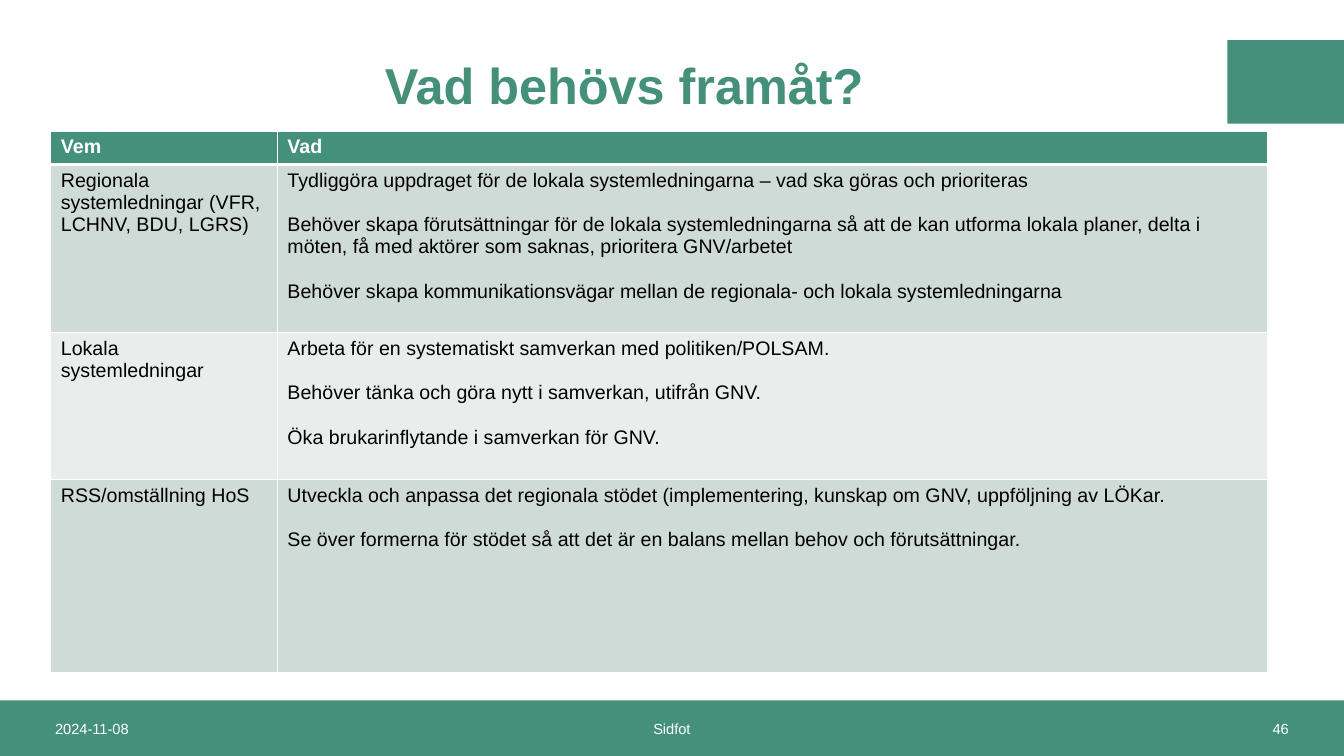
"""Build the slide "Vad behövs framåt?" with a table of needs per actor."""
from dataclasses import dataclass

from lxml import etree
from pptx import Presentation
from pptx.dml.color import RGBColor
from pptx.enum.shapes import MSO_SHAPE
from pptx.enum.text import MSO_ANCHOR, PP_ALIGN
from pptx.oxml.ns import qn
from pptx.slide import Slide
from pptx.table import _Cell
from pptx.text.text import TextFrame
from pptx.util import Cm, Pt

RECT = MSO_SHAPE.RECTANGLE
MIDDLE = MSO_ANCHOR.MIDDLE
LEFT, CENTER, RIGHT = PP_ALIGN.LEFT, PP_ALIGN.CENTER, PP_ALIGN.RIGHT


@dataclass(frozen=True)
class Theme:
    font: str = "Arial"
    green: str = "45907A"
    band_dark: str = "CFDBD7"
    band_light: str = "E9EEEC"
    white: str = "FFFFFF"
    black: str = "000000"
    title_size: float = 36
    body_size: float = 14
    footer_size: float = 10.5
    paragraph_gap: float = 16
    border: float = 1
    header_border: float = 3


@dataclass(frozen=True)
class Box:
    left: float
    top: float
    width: float
    height: float

    def lengths(self) -> tuple[Cm, Cm, Cm, Cm]:
        return Cm(self.left), Cm(self.top), Cm(self.width), Cm(self.height)


@dataclass(frozen=True)
class Label:
    box: Box
    text: str
    size: float
    color: str
    align: PP_ALIGN
    bold: bool = False
    line_spacing: float = 1.0


@dataclass(frozen=True)
class Row:
    height: float
    who: str
    what: tuple[str, ...]


THEME = Theme()
SLIDE_W, SLIDE_H = 33.87, 19.05
FOOTER_TOP, FOOTER_H = 17.65, 1.4

BLOCKS = (
    Box(30.93, 1.01, 2.94, 2.11),
    Box(0, FOOTER_TOP, SLIDE_W, FOOTER_H),
)
LABELS = (
    Label(Box(1.14, FOOTER_TOP, 8.81, FOOTER_H), "2024-11-08",
          THEME.footer_size, THEME.white, LEFT),
    Label(Box(11.22, FOOTER_TOP, 11.43, FOOTER_H), "Sidfot",
          THEME.footer_size, THEME.white, CENTER),
    Label(Box(23.92, FOOTER_TOP, 8.81, FOOTER_H), "46",
          THEME.footer_size, THEME.white, RIGHT),
    Label(Box(9.45, 0.56, 13.21, 3.35), "Vad behövs framåt?",
          THEME.title_size, THEME.green, LEFT, bold=True, line_spacing=0.9),
)
TABLE_LEFT, TABLE_TOP = 1.28, 3.3
COLUMN_WIDTHS = (5.71, 24.96)
ROWS = (
    Row(0.81, "Vem", ("Vad",)),
    Row(4.23, "Regionala systemledningar (VFR, LCHNV, BDU, LGRS)", (
        "Tydliggöra uppdraget för de lokala systemledningarna – vad ska göras och prioriteras",
        "Behöver skapa förutsättningar för de lokala systemledningarna så att de kan utforma "
        "lokala planer, delta i möten, få med aktörer som saknas, prioritera GNV/arbetet",
        "Behöver skapa kommunikationsvägar mellan de regionala- och lokala systemledningarna",
    )),
    Row(3.7, "Lokala systemledningar", (
        "Arbeta för en systematiskt samverkan med politiken/POLSAM.",
        "Behöver tänka och göra nytt i samverkan, utifrån GNV.",
        "Öka brukarinflytande i samverkan för GNV.",
    )),
    Row(4.88, "RSS/omställning HoS", (
        "Utveckla och anpassa det regionala stödet (implementering, kunskap om GNV, "
        "uppföljning av LÖKar.",
        "Se över formerna för stödet så att det är en balans mellan behov och förutsättningar.",
    )),
)


def write(tf: TextFrame, texts: tuple[str, ...], size: float, color: str,
          bold: bool = False, align: PP_ALIGN = LEFT, line_spacing: float = 1.0) -> None:
    """Write the texts as paragraphs that share one style."""
    for i, text in enumerate(texts):
        p = tf.add_paragraph() if i else tf.paragraphs[0]
        p.text = text
        p.alignment = align
        p.line_spacing = line_spacing
        p.space_before = Pt(THEME.paragraph_gap if i else 0)
        p.font.name = THEME.font
        p.font.size = Pt(size)
        p.font.bold = bold
        p.font.color.rgb = RGBColor.from_string(color)


def add_block(s: Slide, box: Box) -> None:
    """Add a plain green rectangle."""
    sp = s.shapes.add_shape(RECT, *box.lengths())
    sp.shadow.inherit = False
    sp.fill.solid()
    sp.fill.fore_color.rgb = RGBColor.from_string(THEME.green)
    sp.line.fill.background()


def add_label(s: Slide, label: Label) -> None:
    """Add a vertically centred text box."""
    tf = s.shapes.add_textbox(*label.box.lengths()).text_frame
    tf.word_wrap = True
    tf.vertical_anchor = MIDDLE
    write(tf, (label.text,), label.size, label.color, label.bold,
          label.align, label.line_spacing)


def set_borders(cell: _Cell, widths: dict[str, float]) -> None:
    """Give the cell white borders of the given widths in points."""
    props = cell._tc.get_or_add_tcPr()
    for i, (side, width) in enumerate(widths.items()):
        line = etree.Element(qn(f"a:ln{side}"), w=str(Pt(width)))
        fill = etree.SubElement(line, qn("a:solidFill"))
        etree.SubElement(fill, qn("a:srgbClr"), val=THEME.white)
        props.insert(i, line)


def add_needs_table(s: Slide) -> None:
    """Add the table with a green header and banded rows."""
    box = Box(TABLE_LEFT, TABLE_TOP, sum(COLUMN_WIDTHS), sum(r.height for r in ROWS))
    table = s.shapes.add_table(len(ROWS), len(COLUMN_WIDTHS), *box.lengths()).table
    for column, width in zip(table.columns, COLUMN_WIDTHS):
        column.width = Cm(width)
    for i, row in enumerate(ROWS):
        table.rows[i].height = Cm(row.height)
        header = i == 0
        band = THEME.band_dark if i % 2 else THEME.band_light
        top = THEME.header_border if i == 1 else THEME.border
        bottom = THEME.header_border if header else THEME.border
        for j, texts in enumerate(((row.who,), row.what)):
            cell = table.cell(i, j)
            cell.fill.solid()
            cell.fill.fore_color.rgb = RGBColor.from_string(THEME.green if header else band)
            set_borders(cell, {"L": THEME.border, "R": THEME.border, "T": top, "B": bottom})
            write(cell.text_frame, texts, THEME.body_size,
                  THEME.white if header else THEME.black, bold=header)


def main() -> None:
    """Build and save the presentation."""
    prs = Presentation()
    prs.slide_width, prs.slide_height = Cm(SLIDE_W), Cm(SLIDE_H)
    s = prs.slides.add_slide(prs.slide_layouts[6])
    for box in BLOCKS:
        add_block(s, box)
    for label in LABELS:
        add_label(s, label)
    add_needs_table(s)
    prs.save("out.pptx")


if __name__ == "__main__":
    main()
